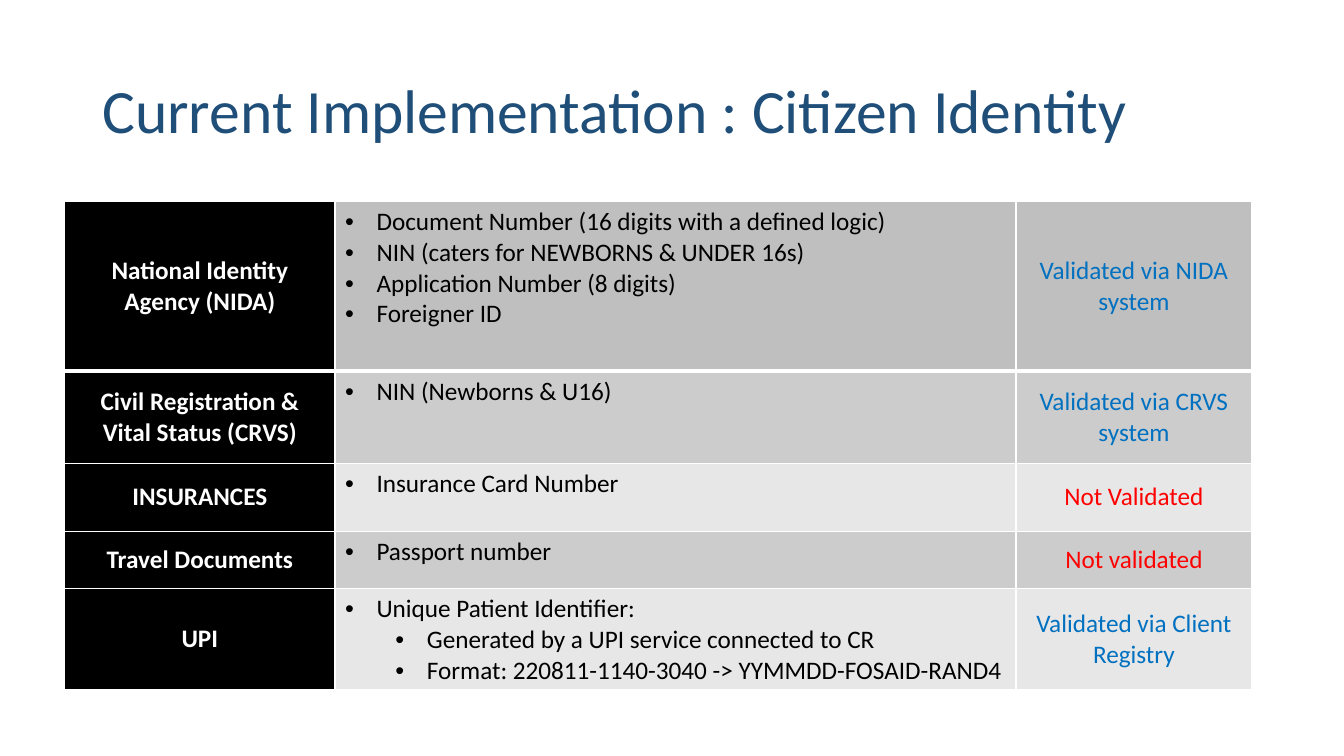
import pptx
import pptx.util
import pptx.dml.color
import pptx.enum.text
import pptx.oxml
import pptx.oxml.ns
from lxml import etree

Pt = pptx.util.Pt
ALIGN = pptx.enum.text.PP_ALIGN
ANCHOR = pptx.enum.text.MSO_ANCHOR

FONT = "Calibri"
WHITE, BLACK, NAVY = "FFFFFF", "000000", "1F4E79"
BLUE, RED = "0070C0", "FF0000"
DARK_GREY, MID_GREY, LIGHT_GREY = "BFBFBF", "CCCCCC", "E7E7E7"
BULLET_HANG, LEVEL_STEP = 22.5, 36

COLUMN_WIDTHS = [193, 486.5, 168.5]

# Source, bullets as (level, text), validation, its colour, row fill, height
IDENTITY_ROWS = [
    ("National Identity Agency (NIDA)",
     [(0, "Document Number (16 digits with a defined logic)"),
      (0, "NIN (caters for NEWBORNS & UNDER 16s)"),
      (0, "Application Number (8 digits)"),
      (0, "Foreigner ID")],
     "Validated via NIDA system", BLUE, DARK_GREY, 121),
    ("Civil Registration & Vital Status (CRVS)",
     [(0, "NIN (Newborns & U16)")],
     "Validated via CRVS system", BLUE, MID_GREY, 66),
    ("INSURANCES",
     [(0, "Insurance Card Number")],
     "Not Validated", RED, LIGHT_GREY, 48.5),
    ("Travel Documents",
     [(0, "Passport number")],
     "Not validated", RED, MID_GREY, 41),
    ("UPI",
     [(0, "Unique Patient Identifier:"),
      (1, "Generated by a UPI service connected to CR"),
      (1, "Format: 220811-1140-3040 -> YYMMDD-FOSAID-RAND4")],
     "Validated via Client Registry", BLUE, LIGHT_GREY, 72.5),
]


def rgb(value):
    return pptx.dml.color.RGBColor.from_string(value)


def write(p, text, size=18, color=BLACK, bold=False, align=ALIGN.LEFT):
    """Put formatted text into a paragraph."""
    p.alignment = align
    r = p.add_run()
    r.text = text
    r.font.name = FONT
    r.font.size = Pt(size)
    r.font.bold = bold
    r.font.color.rgb = rgb(color)


def add_bullet(p, level):
    """Give a paragraph a hanging bullet at its level."""
    p.level = level
    pPr = p._p.get_or_add_pPr()
    pPr.set("marL", str(Pt(BULLET_HANG + LEVEL_STEP * level)))
    pPr.set("indent", str(-Pt(BULLET_HANG)))
    etree.SubElement(pPr, pptx.oxml.ns.qn("a:buFont"), typeface="Arial")
    etree.SubElement(pPr, pptx.oxml.ns.qn("a:buChar"), char="•")


def style_cell(cell, fill, top, bottom):
    """Set the white borders and the fill of a cell."""
    tcPr = cell._tc.get_or_add_tcPr()
    for side, width in (("L", 1), ("R", 1), ("T", top), ("B", bottom)):
        tcPr.append(pptx.oxml.parse_xml(
            f'<a:ln{side} {pptx.oxml.ns.nsdecls("a")} w="{Pt(width)}">'
            f'<a:solidFill><a:srgbClr val="{WHITE}"/></a:solidFill>'
            f'</a:ln{side}>'))
    cell.fill.solid()
    cell.fill.fore_color.rgb = rgb(fill)


def fill_label(cell, text, **fmt):
    """Write a centred cell."""
    cell.vertical_anchor = ANCHOR.MIDDLE
    write(cell.text_frame.paragraphs[0], text, align=ALIGN.CENTER, **fmt)


def fill_bullets(cell, items):
    """Write a bulleted cell."""
    tf = cell.text_frame
    for i, (level, text) in enumerate(items):
        p = tf.add_paragraph() if i else tf.paragraphs[0]
        add_bullet(p, level)
        write(p, text)


def add_title(s, text):
    sp = s.shapes.add_textbox(Pt(66), Pt(28.75), Pt(828), Pt(104.5))
    tf = sp.text_frame
    tf.word_wrap = True
    tf.vertical_anchor = ANCHOR.MIDDLE
    p = tf.paragraphs[0]
    p.line_spacing = 0.9
    write(p, text, size=44, color=NAVY)


def add_identity_table(s):
    heights = [row[-1] for row in IDENTITY_ROWS]
    table = s.shapes.add_table(
        len(heights), len(COLUMN_WIDTHS), Pt(46.25), Pt(144),
        Pt(sum(COLUMN_WIDTHS)), Pt(sum(heights))).table
    table.first_row = False
    table.horz_banding = False
    for column, width in zip(table.columns, COLUMN_WIDTHS):
        column.width = Pt(width)

    for i, (source, items, status, color, fill, height) in enumerate(IDENTITY_ROWS):
        row = table.rows[i]
        row.height = Pt(height)
        # A thicker rule separates the first row from the rest
        top, bottom = (3 if i == 1 else 1), (3 if i == 0 else 1)
        for cell, cell_fill in zip(row.cells, (BLACK, fill, fill)):
            style_cell(cell, cell_fill, top, bottom)
        name_cell, items_cell, status_cell = row.cells
        fill_label(name_cell, source, color=WHITE, bold=True)
        fill_bullets(items_cell, items)
        fill_label(status_cell, status, color=color)


def main():
    prs = pptx.Presentation()
    prs.slide_width, prs.slide_height = Pt(960), Pt(540)
    s = prs.slides.add_slide(prs.slide_layouts[6])
    add_title(s, "Current Implementation : Citizen Identity")
    add_identity_table(s)
    prs.save("out.pptx")


if __name__ == "__main__":
    main()
